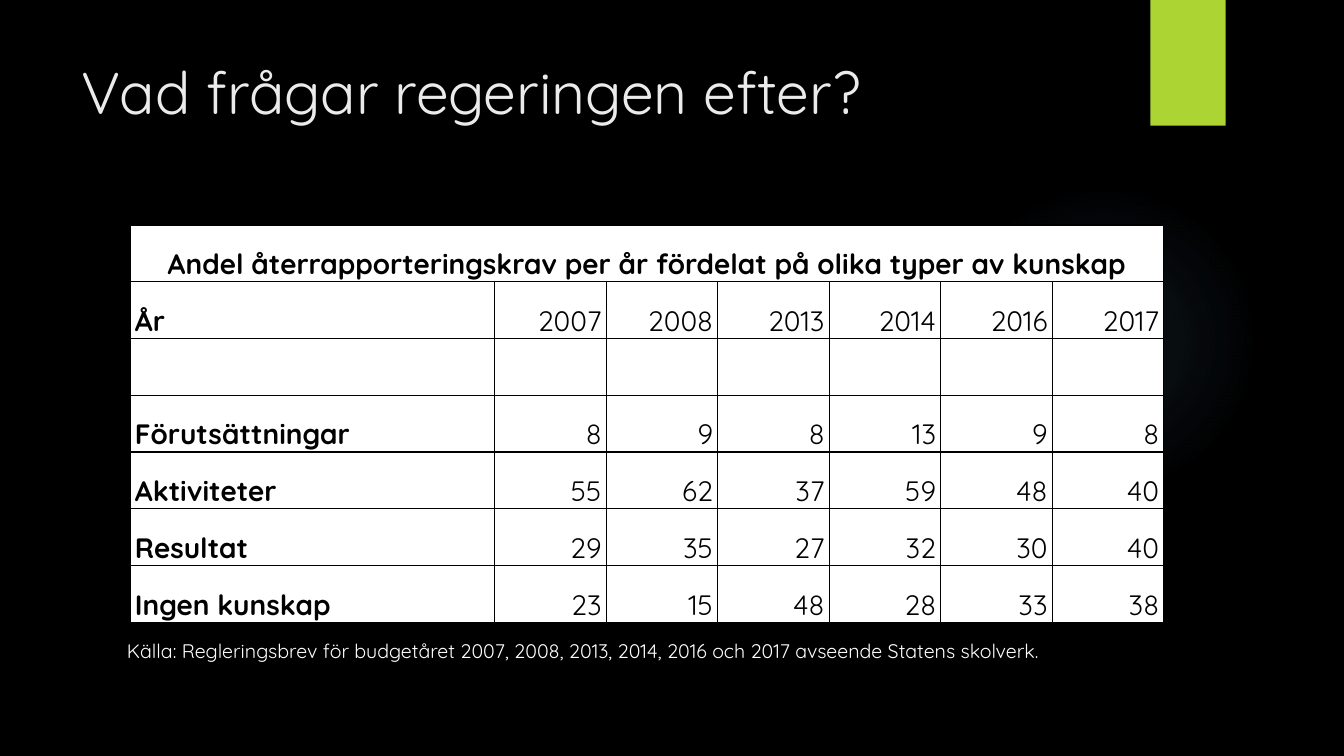
import pptx
import pptx.dml.color
import pptx.enum.shapes
import pptx.enum.text
import pptx.oxml
import pptx.oxml.ns
import pptx.util
from pptx.util import Cm

RGBColor = pptx.dml.color.RGBColor
PP_ALIGN = pptx.enum.text.PP_ALIGN
MSO_SHAPE = pptx.enum.shapes.MSO_SHAPE

BLACK = RGBColor(0x00, 0x00, 0x00)
WHITE = RGBColor(0xFF, 0xFF, 0xFF)
TITLE_GREY = RGBColor(0xEB, 0xEB, 0xEB)
LIME = RGBColor(0xAC, 0xD4, 0x33)
GLOW_BLUE = RGBColor(0x7A, 0xC4, 0xF0)

FONT = "Quicksand"
GLOW_STOPS = [(0, 7), (36, 6), (69, 0)]
TABLE_HEADING = "Andel återrapporteringskrav per år fördelat på olika typer av kunskap"
KNOWLEDGE_ROWS = [
    ("År", 2007, 2008, 2013, 2014, 2016, 2017),
    (),
    ("Förutsättningar", 8, 9, 8, 13, 9, 8),
    ("Aktiviteter", 55, 62, 37, 59, 48, 40),
    ("Resultat", 29, 35, 27, 32, 30, 40),
    ("Ingen kunskap", 23, 15, 48, 28, 33, 38),
]


def format_text(text_frame, text, size, color, bold=False, align=PP_ALIGN.LEFT, spacing=1.0):
    text_frame.text = text
    paragraph = text_frame.paragraphs[0]
    paragraph.alignment = align
    paragraph.line_spacing = spacing
    font = paragraph.runs[0].font
    font.name = FONT
    font.size = pptx.util.Pt(size)
    font.bold = bold
    font.color.rgb = color


def add_text(slide, left, top, width, height, text, size, color, spacing=1.0):
    box = slide.shapes.add_textbox(Cm(left), Cm(top), Cm(width), Cm(height))
    box.text_frame.word_wrap = True
    format_text(box.text_frame, text, size, color, spacing=spacing)


def add_plain_shape(slide, kind, left, top, width, height):
    shape = slide.shapes.add_shape(kind, Cm(left), Cm(top), Cm(width), Cm(height))
    shape.shadow.inherit = False
    shape.line.fill.background()
    return shape


def add_glow(slide):
    glow = add_plain_shape(slide, MSO_SHAPE.OVAL, 23.9, 4.65, 7.82, 7.82)
    stops = "".join(
        f'<a:gs pos="{position * 1000}"><a:srgbClr val="{GLOW_BLUE}">'
        f'<a:alpha val="{alpha * 1000}"/></a:srgbClr></a:gs>'
        for position, alpha in GLOW_STOPS
    )
    gradient = pptx.oxml.parse_xml(
        f'<a:gradFill {pptx.oxml.ns.nsdecls("a")}><a:gsLst>{stops}</a:gsLst>'
        '<a:path path="circle"><a:fillToRect l="50000" t="50000" r="50000" b="50000"/>'
        "</a:path></a:gradFill>"
    )
    geometry = glow.element.spPr.find(pptx.oxml.ns.qn("a:prstGeom"))
    geometry.addnext(gradient)


def add_accent(slide):
    accent = add_plain_shape(slide, MSO_SHAPE.RECTANGLE, 28.99, 0, 1.9, 3.17)
    accent.fill.solid()
    accent.fill.fore_color.rgb = LIME


def style_cell(cell):
    properties = cell._tc.get_or_add_tcPr()
    for side in "LRTB":
        properties.append(pptx.oxml.parse_xml(
            f'<a:ln{side} {pptx.oxml.ns.nsdecls("a")} w="12700"><a:solidFill>'
            f'<a:srgbClr val="{BLACK}"/></a:solidFill></a:ln{side}>'
        ))
    cell.fill.solid()
    cell.fill.fore_color.rgb = WHITE
    cell.margin_left = cell.margin_right = Cm(0.12)
    cell.margin_top = cell.margin_bottom = 0
    cell.vertical_anchor = pptx.enum.text.MSO_ANCHOR.BOTTOM


def add_knowledge_table(slide):
    row_count, column_count = len(KNOWLEDGE_ROWS) + 1, len(KNOWLEDGE_ROWS[0])
    table = slide.shapes.add_table(
        row_count, column_count, Cm(3.28), Cm(5.67), Cm(26.05), Cm(10.01)
    ).table
    table.first_row = table.horz_banding = False
    for index, column in enumerate(table.columns):
        column.width = Cm(2.81 if index else 9.19)
    for row in table.rows:
        row.height = Cm(1.43)
    for cell in table.iter_cells():
        style_cell(cell)

    heading = table.cell(0, 0)
    heading.merge(table.cell(0, column_count - 1))
    format_text(heading.text_frame, TABLE_HEADING, 20, BLACK, True, PP_ALIGN.CENTER, 1.5)
    for row_index, values in enumerate(KNOWLEDGE_ROWS, start=1):
        for column_index, value in enumerate(values):
            is_label = column_index == 0
            align = PP_ALIGN.LEFT if is_label else PP_ALIGN.RIGHT
            text_frame = table.cell(row_index, column_index).text_frame
            format_text(text_frame, str(value), 20, BLACK, is_label, align, 1.5)


def main():
    presentation = pptx.Presentation()
    presentation.slide_width = Cm(33.87)
    presentation.slide_height = Cm(19.05)
    slide = presentation.slides.add_slide(presentation.slide_layouts[6])
    slide.background.fill.solid()
    slide.background.fill.fore_color.rgb = BLACK

    add_glow(slide)
    add_accent(slide)
    add_text(slide, 1.8, 1.27, 26.14, 3.89, "Vad frågar regeringen efter?", 42, TITLE_GREY)
    add_knowledge_table(slide)
    add_text(
        slide, 2.95, 15.67, 24.94, 1.14,
        "Källa: Regleringsbrev för budgetåret 2007, 2008, 2013, 2014, 2016 och 2017 "
        "avseende Statens skolverk.",
        14, WHITE, 1.5,
    )
    presentation.save("out.pptx")


if __name__ == "__main__":
    main()
